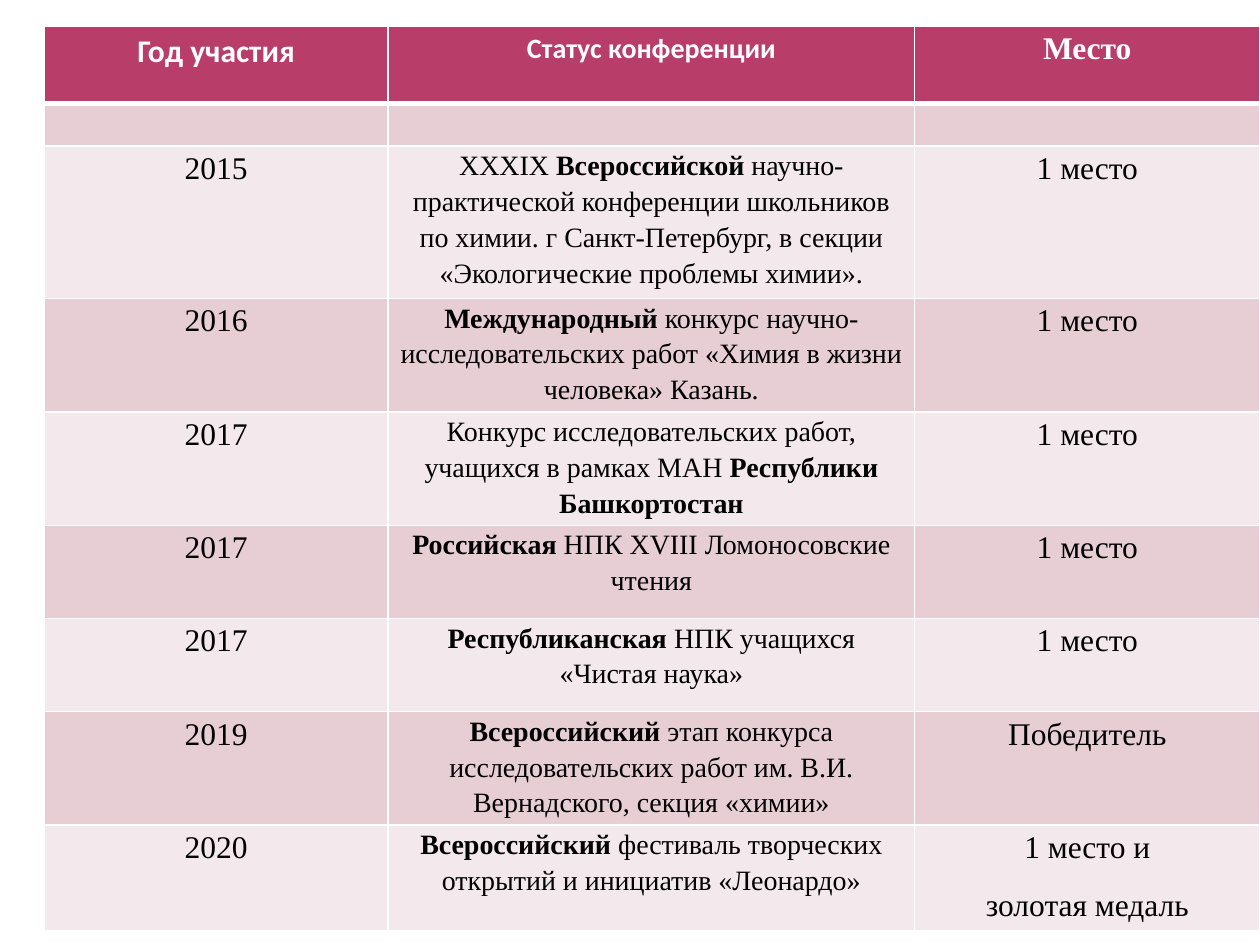
from lxml.etree import SubElement
from pptx import Presentation
from pptx.dml.color import RGBColor
from pptx.enum.text import PP_ALIGN
from pptx.oxml.ns import qn
from pptx.util import Inches, Pt

CRIMSON = RGBColor(0xB8, 0x3D, 0x68)
PINK = RGBColor(0xE6, 0xCE, 0xD4)
PALE_PINK = RGBColor(0xF3, 0xE8, 0xEB)
WHITE = RGBColor(0xFF, 0xFF, 0xFF)
BLACK = RGBColor(0x00, 0x00, 0x00)

SERIF = "Times New Roman"
SANS = "Calibri"

COLUMN_WIDTHS = [2.73, 4.18, 2.74]
ROW_HEIGHTS = [0.61, 0.34, 1.21, 0.9, 0.9, 0.74, 0.74, 0.9, 0.84]
BODY_SIZES = [18, 16, 18]

# Header cells: text, font, size
HEADER = [
    ("Год участия", SANS, 18),
    ("Статус конференции", SANS, 16),
    ("Место", SERIF, 18),
]

# Body rows: ** switches bold, a line break starts a paragraph
RESULTS = [
    ("", "", ""),
    ("2015", "XXXIX **Всероссийской** научно-практической конференции школьников по химии. "
     "г Санкт-Петербург, в секции «Экологические проблемы химии».", "1 место"),
    ("2016", "**Международный** конкурс научно-исследовательских работ "
     "«Химия в жизни человека» Казань.", "1 место"),
    ("2017", "Конкурс исследовательских работ, учащихся в рамках МАН "
     "**Республики Башкортостан**", "1 место"),
    ("2017", "**Российская** НПК XVIII Ломоносовские чтения", "1 место"),
    ("2017", "**Республиканская **НПК учащихся «Чистая наука»", "1 место"),
    ("2019", "**Всероссийский** этап конкурса исследовательских работ "
     "им. В.И. Вернадского, секция «химии»", "Победитель"),
    ("2020", "**Всероссийский** фестиваль творческих открытий и инициатив «Леонардо»",
     "1 место и\nзолотая медаль"),
]


class TableSlide:
    """Holds the table style and the current slide."""

    def __init__(self, slide):
        self.slide = slide

    def add_table(self, left, top, widths, heights):
        frame = self.slide.shapes.add_table(
            len(heights), len(widths), Inches(left), Inches(top),
            Inches(sum(widths)), Inches(sum(heights)))
        table = frame.table
        for column, width in zip(table.columns, widths):
            column.width = Inches(width)
        for row, height in zip(table.rows, heights):
            row.height = Inches(height)
        return table

    def add_borders(self, cell, top, bottom):
        properties = cell._tc.get_or_add_tcPr()
        for side, width in (("L", 1), ("R", 1), ("T", top), ("B", bottom)):
            line = SubElement(properties, qn(f"a:ln{side}"), w=str(Pt(width)))
            fill = SubElement(line, qn("a:solidFill"))
            SubElement(fill, qn("a:srgbClr"), val=str(WHITE))

    def fill_cell(self, cell, text, fill, color, font, size, top=1, bottom=1):
        self.add_borders(cell, top, bottom)
        cell.fill.solid()
        cell.fill.fore_color.rgb = fill
        cell.margin_left = cell.margin_right = Inches(0.07)
        cell.margin_top = cell.margin_bottom = 0
        for index, line in enumerate(text.split("\n")):
            text_frame = cell.text_frame
            paragraph = text_frame.add_paragraph() if index else text_frame.paragraphs[0]
            self.write_paragraph(paragraph, line, color, font, size)

    def write_paragraph(self, paragraph, text, color, font, size):
        paragraph.alignment = PP_ALIGN.CENTER
        paragraph.line_spacing = 1.15
        paragraph.space_after = Pt(10)
        paragraph.font.name = font
        paragraph.font.size = Pt(size)
        paragraph.font.color.rgb = color
        for index, part in enumerate(text.split("**")):
            if part:
                run = paragraph.add_run()
                run.text = part
                run.font.bold = index % 2 == 1


def main():
    presentation = Presentation()
    presentation.slide_width = Inches(10)
    presentation.slide_height = Inches(7.5)
    page = TableSlide(presentation.slides.add_slide(presentation.slide_layouts[6]))
    table = page.add_table(0.35, 0.21, COLUMN_WIDTHS, ROW_HEIGHTS)

    # Header row
    for column, (title, font, size) in enumerate(HEADER):
        page.fill_cell(table.cell(0, column), f"**{title}**", CRIMSON, WHITE,
                       font, size, bottom=3)

    # Banded body rows
    for row, result in enumerate(RESULTS, start=1):
        fill = PINK if row % 2 else PALE_PINK
        for column, text in enumerate(result):
            page.fill_cell(table.cell(row, column), text, fill, BLACK, SERIF,
                           BODY_SIZES[column], top=3 if row == 1 else 1)

    presentation.save("out.pptx")


if __name__ == "__main__":
    main()
